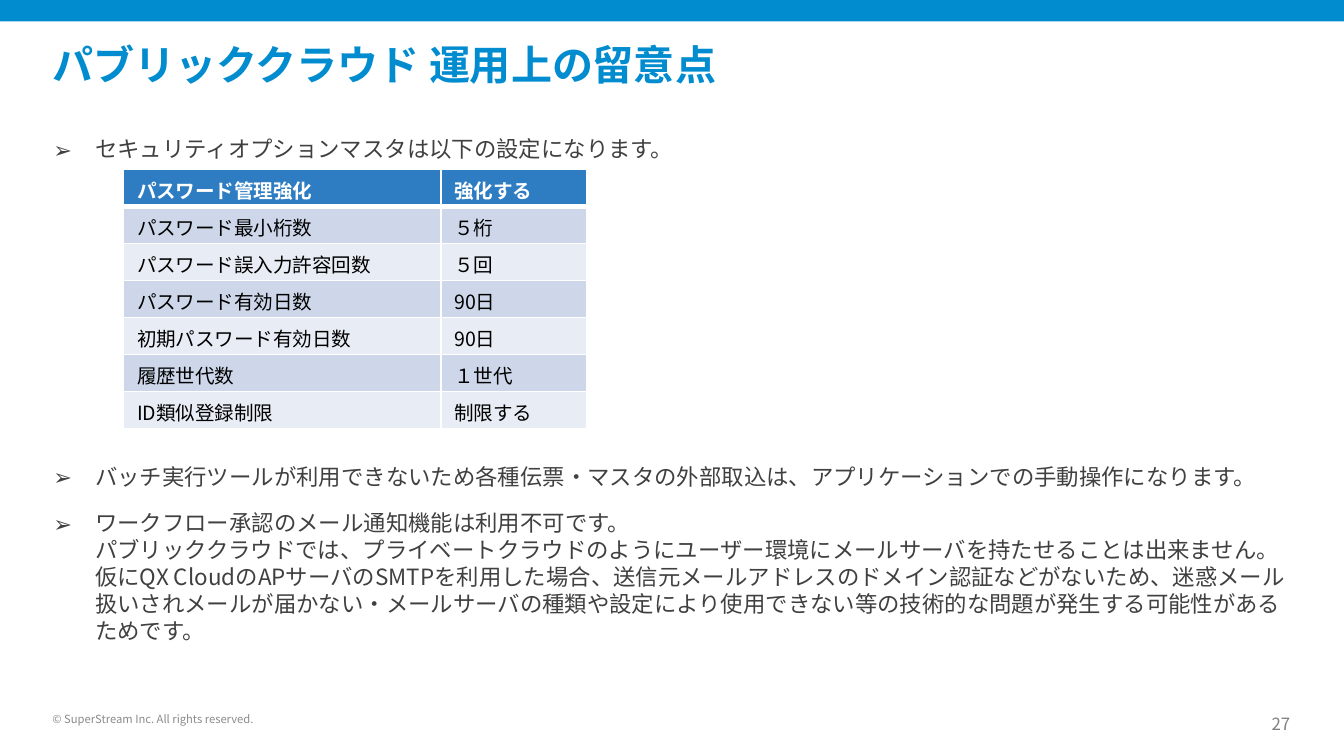
from lxml.etree import SubElement
from pptx import Presentation
from pptx.dml.color import RGBColor
from pptx.enum.shapes import MSO_SHAPE
from pptx.enum.text import MSO_ANCHOR, MSO_AUTO_SIZE, PP_ALIGN
from pptx.oxml import parse_xml
from pptx.oxml.ns import nsdecls, qn
from pptx.util import Inches, Pt

THEME = {
    "font": "Noto Sans CJK JP",
    "brand": "008CCF", "text": "404040", "page": "808080", "foot": "8C8C8C",
    "head": "2E7DC2", "bands": ("CDD7E9", "E8ECF4"),
    "white": "FFFFFF", "black": "000000",
    "title_size": 22, "body_size": 12, "cell_size": 10.5,
    "page_size": 9, "foot_size": 6, "leading": 14.4,
}

TITLE = "パブリッククラウド 運用上の留意点"
FOOTER = "© SuperStream Inc. All rights reserved."
PAGE = "27"

# (space before in points, lines)
NOTES = [
    (0, ["セキュリティオプションマスタは以下の設定になります。"]),
    (160.8, ["バッチ実行ツールが利用できないため各種伝票・マスタの外部取込は、"
             "アプリケーションでの手動操作になります。"]),
    (10.5, [
        "ワークフロー承認のメール通知機能は利用不可です。",
        "パブリッククラウドでは、プライベートクラウドのようにユーザー環境にメールサーバを持たせることは出来ません。",
        "仮にQX CloudのAPサーバのSMTPを利用した場合、送信元メールアドレスのドメイン認証などがないため、迷惑メール",
        "扱いされメールが届かない・メールサーバの種類や設定により使用できない等の技術的な問題が発生する可能性がある",
        "ためです。",
    ]),
]

COLS = (2.36, 1.09)
ROWS = [
    ("パスワード管理強化", "強化する"),
    ("パスワード最小桁数", "５桁"),
    ("パスワード誤入力許容回数", "５回"),
    ("パスワード有効日数", "90日"),
    ("初期パスワード有効日数", "90日"),
    ("履歴世代数", "１世代"),
    ("ID類似登録制限", "制限する"),
]


def rgb(name):
    return RGBColor.from_string(THEME.get(name, name))


def style(para, size, color, bold=False):
    for run in para.runs:
        font = run.font
        font.name, font.size, font.bold = THEME["font"], Pt(THEME[size]), bold
        font.color.rgb = rgb(color)
        east = SubElement(run._r.get_or_add_rPr(), qn("a:ea"))
        east.set("typeface", THEME["font"])


def set_frame(frame, inset=0, anchor=MSO_ANCHOR.TOP):
    frame.word_wrap = True
    frame.auto_size = MSO_AUTO_SIZE.NONE
    frame.vertical_anchor = anchor
    frame.margin_left = frame.margin_right = Inches(inset)
    frame.margin_top = frame.margin_bottom = Inches(inset / 2)


def add_label(slide, box, text, size, color, align):
    frame = slide.shapes.add_textbox(*map(Inches, box)).text_frame
    set_frame(frame, anchor=MSO_ANCHOR.BOTTOM)
    frame.text = text
    para = frame.paragraphs[0]
    para.alignment = align
    style(para, size, color)


def add_bullet(para):
    props = para._p.get_or_add_pPr()
    props.set("marL", str(Inches(0.31)))
    props.set("indent", str(-Inches(0.31)))
    SubElement(props, qn("a:buFont")).set("typeface", THEME["font"])
    SubElement(props, qn("a:buChar")).set("char", "➢")


def add_notes(slide):
    frame = slide.shapes.add_textbox(
        Inches(0.3), Inches(0.96), Inches(9.67), Inches(3.92)).text_frame
    set_frame(frame, inset=0.1)
    for i, (gap, lines) in enumerate(NOTES):
        para = frame.add_paragraph() if i else frame.paragraphs[0]
        para.text = "\v".join(lines)
        add_bullet(para)
        para.line_spacing = Pt(THEME["leading"])
        para.space_before = Pt(gap)
        style(para, "body_size", "text")


def set_borders(cell, widths):
    props = cell._tc.get_or_add_tcPr()
    for i, (side, width) in enumerate(widths.items()):
        props.insert(i, parse_xml(
            f'<a:ln{side} {nsdecls("a")} w="{Pt(width)}"><a:solidFill>'
            f'<a:srgbClr val="{THEME["white"]}"/></a:solidFill></a:ln{side}>'))


def add_settings(slide):
    high = 1.93
    table = slide.shapes.add_table(
        len(ROWS), len(COLS), Inches(0.92), Inches(1.26),
        Inches(sum(COLS)), Inches(high)).table
    for col, width in zip(table.columns, COLS):
        col.width = Inches(width)
    for r, row in enumerate(ROWS):
        table.rows[r].height = Inches(high / len(ROWS))
        head = r == 0
        for c, text in enumerate(row):
            cell = table.cell(r, c)
            cell.text = text
            cell.margin_left = cell.margin_right = Inches(0.1)
            cell.margin_top, cell.margin_bottom = Inches(0.05), Inches(0.01)
            cell.fill.solid()
            cell.fill.fore_color.rgb = rgb("head" if head else THEME["bands"][(r - 1) % 2])
            set_borders(cell, {"L": 1, "R": 1, "T": 3 if r == 1 else 1,
                               "B": 3 if head else 1})
            style(cell.text_frame.paragraphs[0], "cell_size",
                  "white" if head else "black", head)


def add_title(slide):
    title = slide.shapes.title
    title.left, title.top = Inches(0.39), Inches(0.29)
    title.width, title.height = Inches(7.76), Inches(0.64)
    set_frame(title.text_frame)
    title.text_frame.text = TITLE
    para = title.text_frame.paragraphs[0]
    para.alignment = PP_ALIGN.LEFT
    style(para, "title_size", "brand", True)


def add_bar(slide, width):
    bar = slide.shapes.add_shape(MSO_SHAPE.RECTANGLE, 0, 0, width, Inches(0.16))
    bar.shadow.inherit = False
    bar.fill.solid()
    bar.fill.fore_color.rgb = rgb("brand")
    bar.line.fill.background()


def main():
    deck = Presentation()
    deck.slide_width = Inches(10)
    deck.slide_height = deck.slide_width * 9 // 16
    slide = deck.slides.add_slide(deck.slide_layouts[5])
    add_bar(slide, deck.slide_width)
    add_title(slide)
    add_label(slide, (9.21, 5.31, 0.39, 0.15), PAGE, "page_size", "page", PP_ALIGN.RIGHT)
    add_label(slide, (0.39, 5.25, 2.36, 0.15), FOOTER, "foot_size", "foot", PP_ALIGN.LEFT)
    add_notes(slide)
    add_settings(slide)
    deck.save("out.pptx")


if __name__ == "__main__":
    main()
